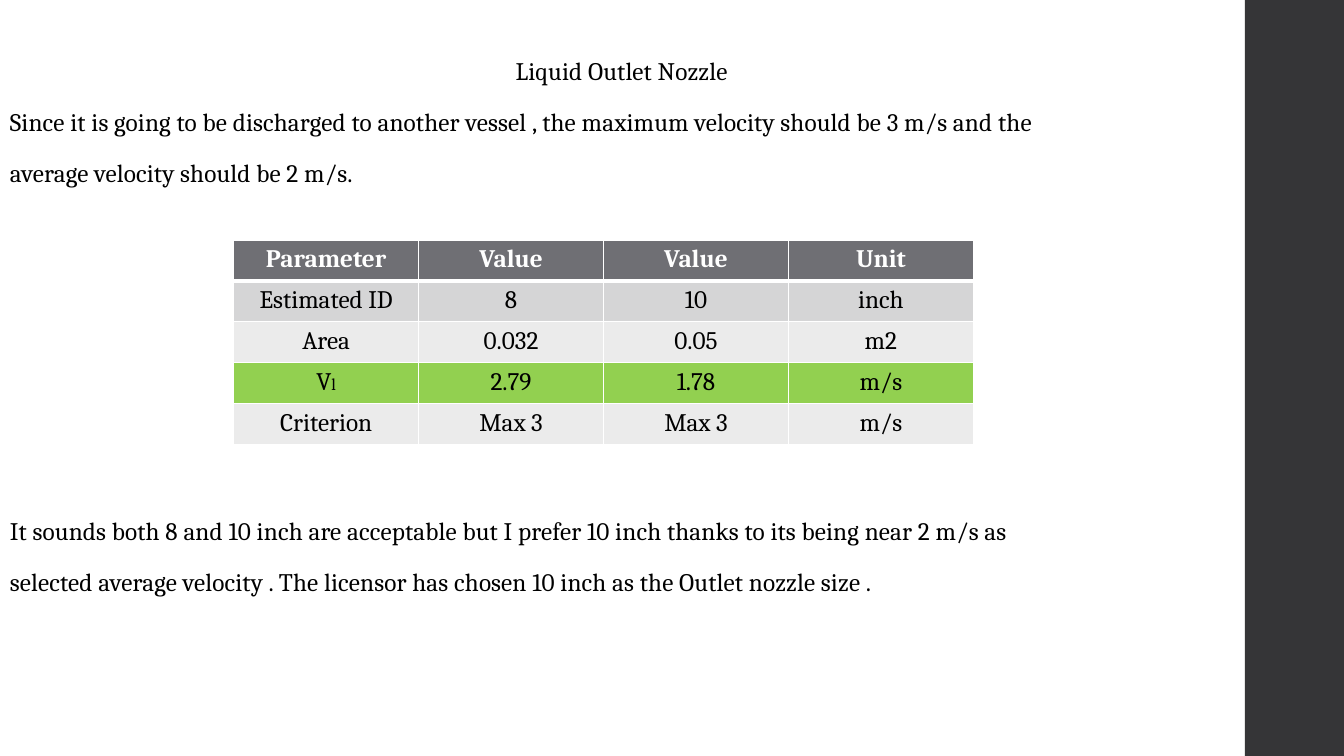
from pptx import Presentation
from pptx.dml.color import RGBColor
from pptx.enum.shapes import MSO_SHAPE
from pptx.enum.text import PP_ALIGN
from pptx.oxml.ns import qn
from pptx.util import Cm, Pt
from lxml import etree

RECTANGLE = MSO_SHAPE.RECTANGLE
LEFT, CENTER = PP_ALIGN.LEFT, PP_ALIGN.CENTER


def color(hex_string):
    return RGBColor.from_string(hex_string)


def style(paragraph, align, hex_string, bold=False):
    paragraph.alignment = align
    paragraph.font.name = "Cambria"
    paragraph.font.size = Pt(18)
    paragraph.font.bold = bold
    paragraph.font.color.rgb = color(hex_string)


prs = Presentation()
prs.slide_width, prs.slide_height = Cm(33.87), Cm(19.05)
slide = prs.slides.add_slide(prs.slide_layouts[6])

side_band = slide.shapes.add_shape(RECTANGLE, Cm(31.37), 0, Cm(2.5), Cm(19.05))
side_band.shadow.inherit = False
side_band.fill.solid()
side_band.fill.fore_color.rgb = color("353537")
side_band.line.fill.background()

passages = [
    (1.33, 3.8, [
        ("Liquid Outlet Nozzle", CENTER),
        ("Since it is going to be discharged to another vessel , the maximum velocity should be 3 m/s and the", LEFT),
        ("average velocity should be 2 m/s.", LEFT),
    ]),
    (12.92, 2.5, [
        ("It sounds both 8 and 10 inch are acceptable but I prefer 10 inch thanks to its being near 2 m/s as", LEFT),
        ("selected average velocity . The licensor has chosen 10 inch as the Outlet nozzle size .", LEFT),
    ]),
]
for top, height, lines in passages:
    passage = slide.shapes.add_textbox(0, Cm(top), Cm(31.34), Cm(height)).text_frame
    passage.word_wrap = True
    for index, (line, align) in enumerate(lines):
        paragraph = passage.add_paragraph() if index else passage.paragraphs[0]
        paragraph.text = line
        style(paragraph, align, "000000")
        paragraph.line_spacing = 0.95
        paragraph.space_before = Pt(14 if index else 0)
        paragraph.space_after = Pt(2)
        paragraph.runs[0].font.language_id = None
        paragraph.runs[0]._r.get_or_add_rPr().set("spc", "10")

nozzle_rows = [
    ("6F6F74", ["Parameter", "Value", "Value", "Unit"]),
    ("D5D5D6", ["Estimated ID", "8", "10", "inch"]),
    ("EBEBEB", ["Area", "0.032", "0.05", "m2"]),
    ("92D050", ["V", "2.79", "1.78", "m/s"]),
    ("EBEBEB", ["Criterion", "Max 3", "Max 3", "m/s"]),
]
nozzle_table = slide.shapes.add_table(
    len(nozzle_rows), 4, Cm(5.89), Cm(6.05), Cm(18.64), Cm(5.15)).table

for row, (row_fill, values) in enumerate(nozzle_rows):
    header = row == 0
    for column, value in enumerate(values):
        cell = nozzle_table.cell(row, column)
        cell.text = value
        style(cell.text_frame.paragraphs[0], CENTER, "FFFFFF" if header else "000000", header)
        properties = cell._tc.get_or_add_tcPr()
        for side in ("lnL", "lnR", "lnT", "lnB"):
            thick = (header and side == "lnB") or (row == 1 and side == "lnT")
            border = etree.SubElement(properties, qn(f"a:{side}"), w=str(Pt(3 if thick else 1)))
            border_fill = etree.SubElement(border, qn("a:solidFill"))
            etree.SubElement(border_fill, qn("a:srgbClr"), val="FFFFFF")
        cell.fill.solid()
        cell.fill.fore_color.rgb = color(row_fill)

velocity_subscript = nozzle_table.cell(3, 0).text_frame.paragraphs[0].add_run()
velocity_subscript.text = "l"
velocity_subscript.font.size = Pt(12)

prs.save("out.pptx")
